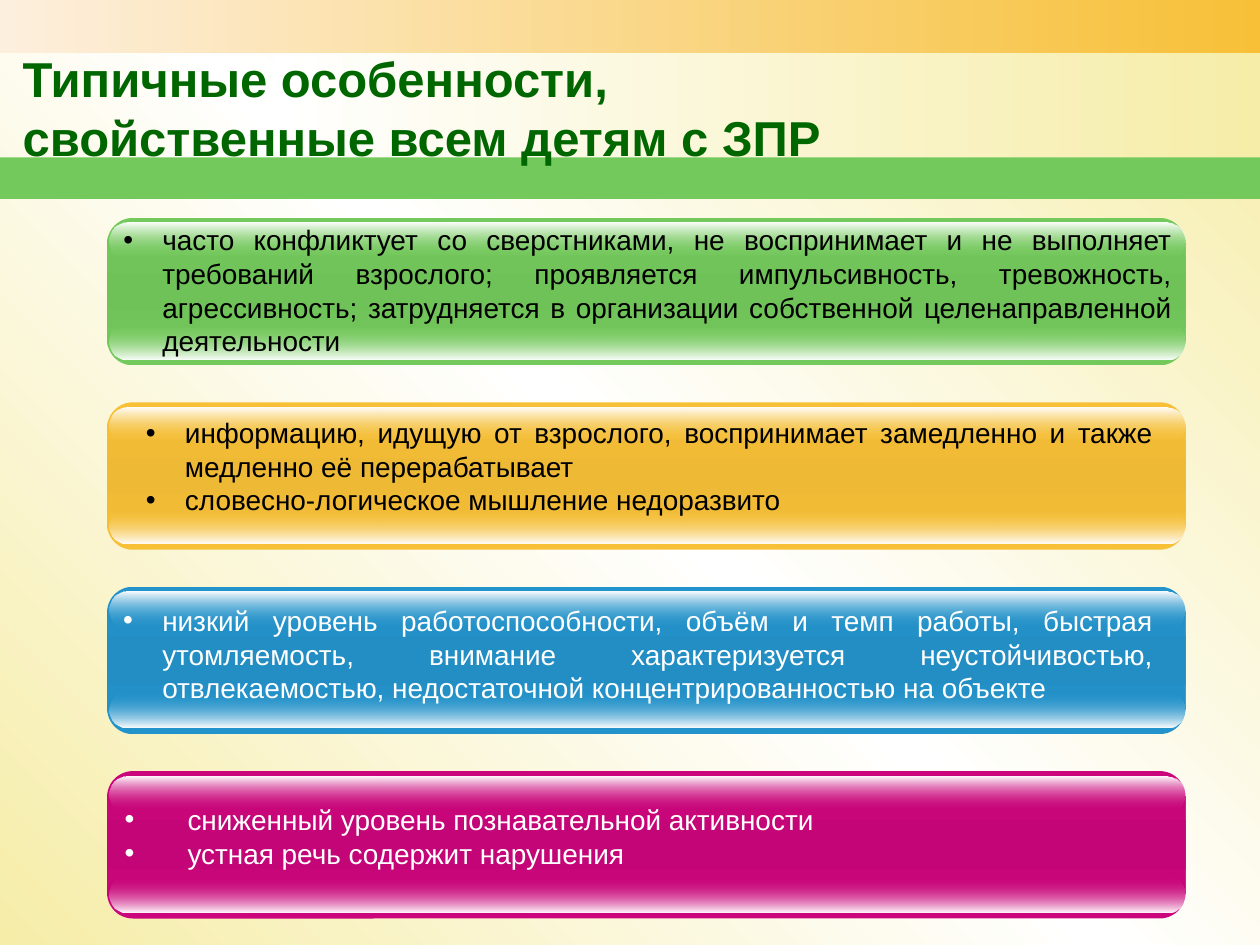
import dataclasses

import pptx
import pptx.dml.color
import pptx.enum.shapes
import pptx.enum.text
import pptx.oxml
import pptx.oxml.ns
import pptx.util

Inches = pptx.util.Inches
Shape = pptx.enum.shapes.MSO_SHAPE
Align = pptx.enum.text.PP_ALIGN
Size = pptx.enum.text.MSO_AUTO_SIZE


@dataclasses.dataclass(frozen=True)
class Theme:
    face: str = "Arial"
    head: int = 28
    body: int = 16
    title: str = "006600"
    black: str = "000000"
    white: str = "FFFFFF"
    cream: str = "F6EDA8"
    pale: str = "FDEFDD"
    green: str = "73C95B"
    moss: str = "6FC258"
    gold: str = "F7C037"
    amber: str = "EEB935"
    blue: str = "2393CB"
    navy: str = "228EC4"
    pink: str = "CB057B"
    plum: str = "C40577"


class Deck:
    """Holds the theme and the current slide, and draws each kind of element."""

    def __init__(self, theme):
        self.theme = theme
        self.file = pptx.Presentation()
        self.file.slide_width, self.file.slide_height = Inches(10), Inches(7.5)
        self.slide = self.file.slides.add_slide(self.file.slide_layouts[5])

    def blend(self, fill, root, angle, stops):
        fill.gradient()
        fill.gradient_angle = 360 - angle
        group = root.find(".//" + pptx.oxml.ns.qn("a:gsLst"))
        for old in list(group):
            group.remove(old)
        space = pptx.oxml.ns.nsdecls("a")
        for place, color, alpha in stops:
            group.append(pptx.oxml.parse_xml(
                f'<a:gs {space} pos="{place * 1000}"><a:srgbClr val="{color}">'
                f'<a:alpha val="{alpha * 1000}"/></a:srgbClr></a:gs>'))

    def back(self):
        look = self.theme
        stops = [(0, look.cream, 100), (50, look.white, 100), (100, look.cream, 100)]
        self.blend(self.slide.background.fill, self.slide.element, 315, stops)

    def block(self, kind, box, stops, angle=0, round=None):
        shape = self.slide.shapes.add_shape(kind, *map(Inches, box))
        shape.shadow.inherit = False
        shape.line.fill.background()
        if round is not None:
            shape.adjustments[0] = round
        if len(stops) == 1:
            shape.fill.solid()
            shape.fill.fore_color.rgb = pptx.dml.color.RGBColor.from_string(stops[0])
        else:
            self.blend(shape.fill, shape.element, angle, stops)

    def bands(self):
        look = self.theme
        self.block(Shape.RECTANGLE, (0, 0, 10, 0.42),
                   [(0, look.pale, 100), (100, look.gold, 100)])
        self.block(Shape.RECTANGLE, (2.17, 0.42, 7.83, 0.83),
                   [(0, look.white, 100), (100, look.cream, 100)])
        self.block(Shape.RECTANGLE, (0, 1.25, 10, 0.33), [look.green])

    def panel(self, top, edge, core):
        kind, white = Shape.ROUNDED_RECTANGLE, self.theme.white
        self.block(kind, (0.85, top, 8.56, 1.17),
                   [(0, edge, 100), (50, core, 100), (100, edge, 100)], 90, 0.175)
        self.block(kind, (0.87, top + 0.84, 8.53, 0.28),
                   [(0, edge, 0), (100, white, 100)], 90, 0.5)
        self.block(kind, (0.87, top + 0.04, 8.53, 0.28),
                   [(0, white, 100), (100, edge, 0)], 90, 0.5)

    def style(self, para, size, color, bold=False):
        font = para.font
        font.name, font.size, font.bold = self.theme.face, pptx.util.Pt(size), bold
        font.color.rgb = pptx.dml.color.RGBColor.from_string(color)

    def title(self, text, box):
        shape = self.slide.shapes.title
        shape.left, shape.top, shape.width, shape.height = map(Inches, box)
        frame = shape.text_frame
        frame.text = text
        frame.auto_size = Size.NONE
        frame.vertical_anchor = pptx.enum.text.MSO_ANCHOR.MIDDLE
        para = frame.paragraphs[0]
        para.alignment = Align.LEFT
        self.style(para, self.theme.head, self.theme.title, True)
        self.slide.shapes.element.append(shape.element)

    def bullets(self, lines, box, color, indent):
        frame = self.slide.shapes.add_textbox(*map(Inches, box)).text_frame
        frame.word_wrap = True
        frame.auto_size = Size.SHAPE_TO_FIT_TEXT
        frame.text = "\n".join(lines)
        space = pptx.oxml.ns.nsdecls("a")
        for para in frame.paragraphs:
            para.alignment = Align.JUSTIFY
            props = para._p.get_or_add_pPr()
            props.set("marL", str(Inches(indent)))
            props.set("indent", str(-Inches(indent)))
            props.append(pptx.oxml.parse_xml(f'<a:buFont {space} typeface="Arial"/>'))
            props.append(pptx.oxml.parse_xml(f'<a:buChar {space} char="•"/>'))
            self.style(para, self.theme.body, color)


def main():
    look = Theme()
    deck = Deck(look)
    deck.back()
    deck.bands()
    deck.title("Типичные особенности,\vсвойственные всем детям с ЗПР",
               (0.08, 0.44, 9, 0.82))
    first, last = 1.73, 6.12
    panels = [
        (look.green, look.moss, look.black, (0.88, 1.72, 8.52, 1.18), 0.31,
         ["часто конфликтует со сверстниками, не воспринимает и не выполняет "
          "требований взрослого; проявляется импульсивность, тревожность, "
          "агрессивность; затрудняется в организации собственной "
          "целенаправленной деятельности"]),
        (look.gold, look.amber, look.black, (1.06, 3.25, 8.19, 0.91), 0.31,
         ["информацию, идущую от взрослого, воспринимает замедленно и также "
          "медленно её перерабатывает",
          "словесно-логическое мышление недоразвито"]),
        (look.blue, look.navy, look.white, (0.88, 4.74, 8.37, 0.91), 0.31,
         ["низкий уровень работоспособности, объём и темп работы, быстрая "
          "утомляемость, внимание характеризуется неустойчивостью, "
          "отвлекаемостью, недостаточной концентрированностью на объекте"]),
        (look.pink, look.plum, look.white, (0.89, 6.32, 7.42, 0.64), 0.5,
         ["сниженный уровень познавательной активности",
          "устная речь содержит нарушения"]),
    ]
    step = (last - first) / (len(panels) - 1)
    for row, (edge, core, color, box, indent, lines) in enumerate(panels):
        deck.panel(first + row * step, edge, core)
        deck.bullets(lines, box, color, indent)
    deck.file.save("out.pptx")


if __name__ == "__main__":
    main()
